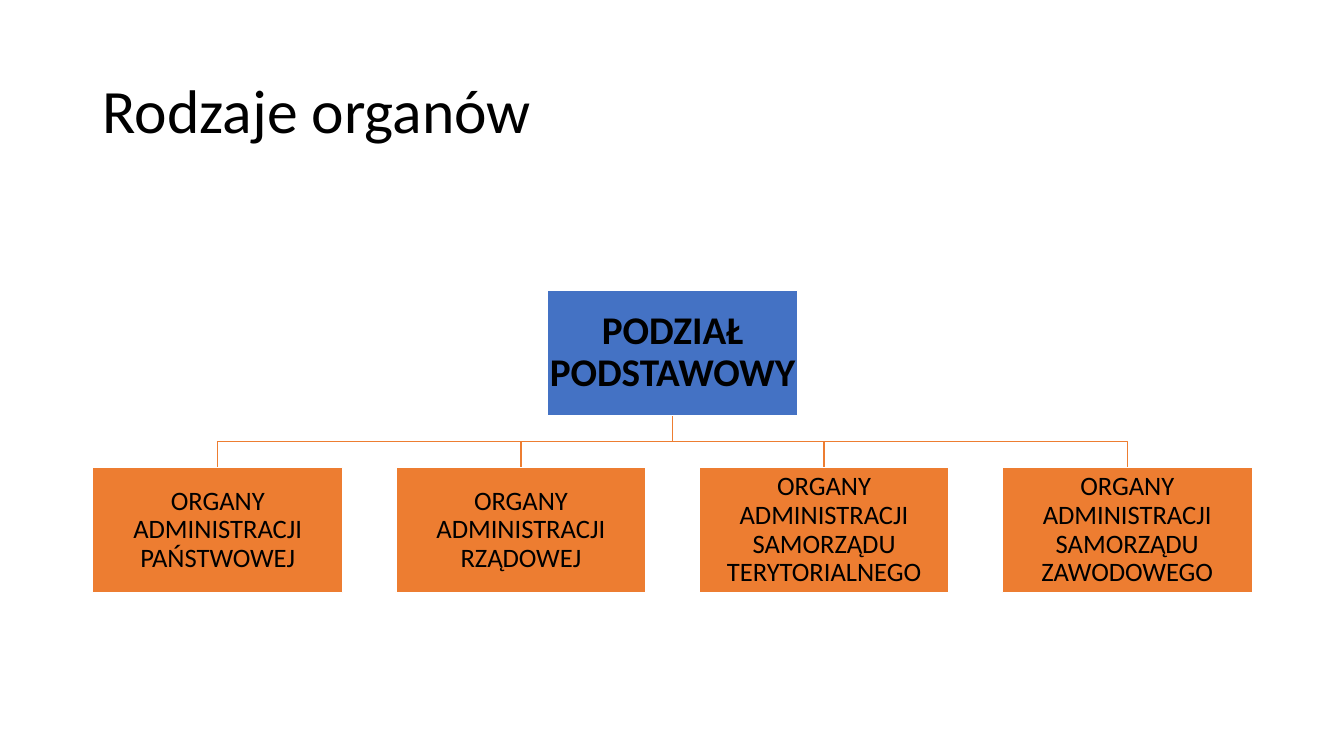
from dataclasses import dataclass

from pptx import Presentation
from pptx.dml.color import RGBColor
from pptx.enum.shapes import MSO_SHAPE as Shape
from pptx.enum.text import MSO_ANCHOR as Anchor, PP_ALIGN as Align
from pptx.slide import Slide
from pptx.text.text import TextFrame
from pptx.util import Inches, Pt


@dataclass(frozen=True)
class Theme:
    """Colours, font and type sizes of the slide."""
    font: str = "Calibri"
    text: RGBColor = RGBColor(0x00, 0x00, 0x00)
    root: RGBColor = RGBColor(0x44, 0x72, 0xC4)
    branch: RGBColor = RGBColor(0xED, 0x7D, 0x31)
    border: RGBColor = RGBColor(0xFF, 0xFF, 0xFF)
    title_size: int = 44
    root_size: int = 28
    branch_size: int = 19
    line_width: int = 1


@dataclass(frozen=True)
class Node:
    """A box of the organisation chart, in inches."""
    text: str
    left: float
    top: float
    fill: RGBColor
    size: int
    bold: bool = False

    @property
    def center(self) -> float:
        """Return the horizontal middle of the box."""
        return self.left + NODE_W / 2


THEME = Theme()
LEFT, WIDTH = 0.92, 11.5
NODE_W, NODE_H = 2.48, 1.24
ROOT_TOP, BRANCH_TOP = 2.88, 4.64
BRANCHES = (
    "ORGANY ADMINISTRACJI PAŃSTWOWEJ",
    "ORGANY ADMINISTRACJI RZĄDOWEJ",
    "ORGANY ADMINISTRACJI SAMORZĄDU TERYTORIALNEGO",
    "ORGANY ADMINISTRACJI SAMORZĄDU ZAWODOWEGO",
)


def set_text(tf: TextFrame, text: str, size: int, align: Align, bold: bool = False) -> None:
    """Write one vertically centred paragraph in the theme font."""
    tf.text = text
    tf.word_wrap = True
    tf.vertical_anchor = Anchor.MIDDLE
    p = tf.paragraphs[0]
    p.alignment = align
    p.line_spacing = 0.9
    font = p.runs[0].font
    font.name, font.size, font.bold = THEME.font, Pt(size), bold
    font.color.rgb = THEME.text


def add_title(s: Slide, text: str) -> None:
    """Add the slide title."""
    sp = s.shapes.add_textbox(Inches(LEFT), Inches(0.4), Inches(WIDTH), Inches(1.45))
    set_text(sp.text_frame, text, THEME.title_size, Align.LEFT)


def add_node(s: Slide, node: Node) -> None:
    """Draw a box with its label."""
    sp = s.shapes.add_shape(Shape.RECTANGLE, Inches(node.left), Inches(node.top),
                            Inches(NODE_W), Inches(NODE_H))
    sp.shadow.inherit = False
    sp.fill.solid()
    sp.fill.fore_color.rgb = node.fill
    sp.line.color.rgb = THEME.border
    sp.line.width = Pt(THEME.line_width)
    tf = sp.text_frame
    tf.margin_left = tf.margin_right = tf.margin_top = tf.margin_bottom = Inches(0.01)
    set_text(tf, node.text, node.size, Align.CENTER, node.bold)


def add_elbow(s: Slide, parent: Node, child: Node) -> None:
    """Draw the bent line from a parent box down to a child box."""
    start = parent.top + NODE_H
    middle = (start + child.top) / 2
    points = [(parent.center, middle), (child.center, middle), (child.center, child.top)]
    builder = s.shapes.build_freeform(Inches(parent.center), Inches(start))
    builder.add_line_segments([(Inches(x), Inches(y)) for x, y in points], close=False)
    sp = builder.convert_to_shape()
    sp.shadow.inherit = False
    sp.fill.background()
    sp.line.color.rgb = THEME.branch
    sp.line.width = Pt(THEME.line_width)


def main() -> None:
    """Build the slide and save it."""
    prs = Presentation()
    prs.slide_width, prs.slide_height = Inches(13.33), Inches(7.5)
    s = prs.slides.add_slide(prs.slide_layouts[6])
    add_title(s, "Rodzaje organów")

    root = Node("PODZIAŁ PODSTAWOWY", LEFT + (WIDTH - NODE_W) / 2, ROOT_TOP,
                THEME.root, THEME.root_size, bold=True)
    pitch = (WIDTH - NODE_W) / (len(BRANCHES) - 1)
    branches = [Node(text, LEFT + i * pitch, BRANCH_TOP, THEME.branch, THEME.branch_size)
                for i, text in enumerate(BRANCHES)]
    for branch in reversed(branches):
        add_elbow(s, root, branch)
    for node in (root, *branches):
        add_node(s, node)
    prs.save("out.pptx")


if __name__ == "__main__":
    main()
